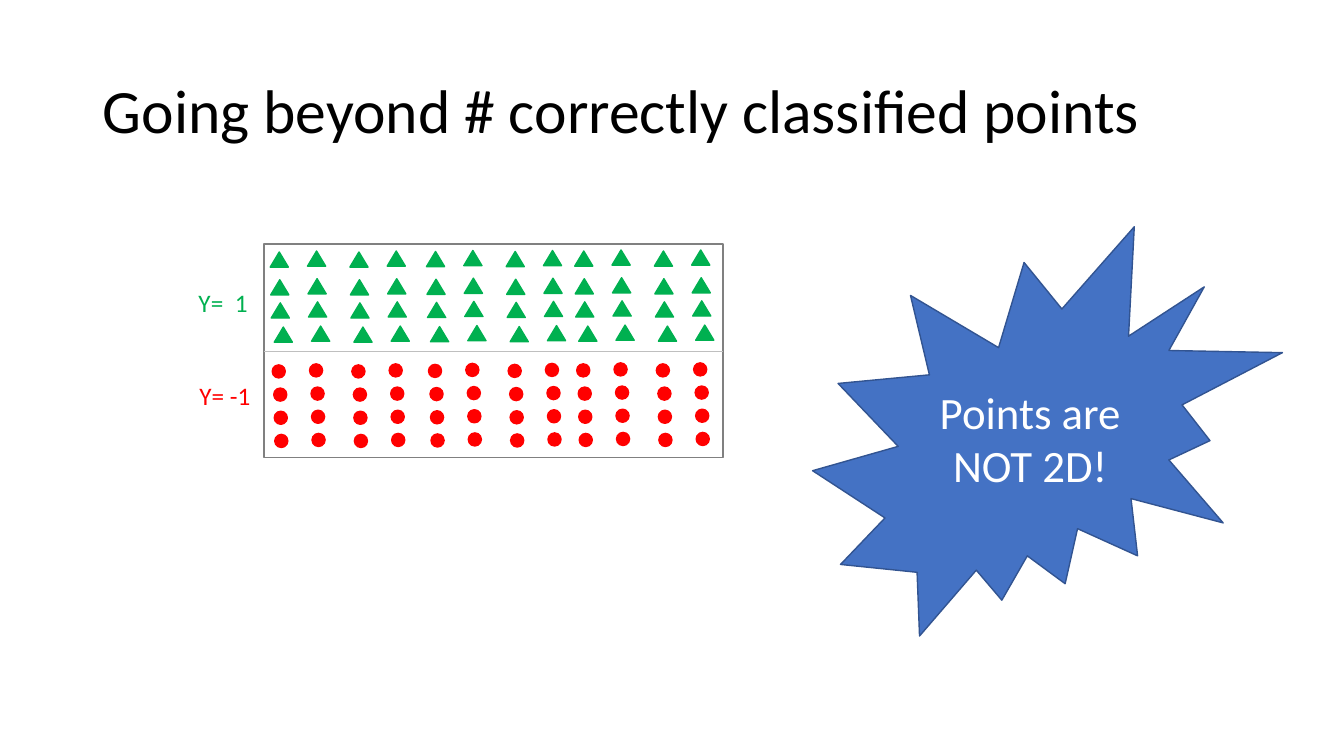
import itertools
import pptx
import pptx.util
import pptx.dml.color
import pptx.enum.shapes
import pptx.enum.text
import pptx.oxml
import pptx.oxml.ns

Kind = pptx.enum.shapes.MSO_SHAPE
Align = pptx.enum.text.PP_ALIGN
Mid = pptx.enum.text.MSO_ANCHOR.MIDDLE
Pt = pptx.util.Pt
hues = {"green": "00B050", "red": "FF0000", "frame": "808080", "rule": "BFBFBF",
        "blue": "4472C4", "edge": "325491", "white": "FFFFFF", "black": "000000"}
tint = {name: pptx.dml.color.RGBColor.from_string(code) for name, code in hues.items()}

deck = pptx.Presentation()
deck.slide_width = pptx.util.Inches(13.33)
deck.slide_height = pptx.util.Inches(7.5)
cell = deck.slide_height / 750
slide = deck.slides.add_slide(deck.slide_layouts[5])


def grid(*spans):
    return [round(span * cell) for span in spans]


def draw(home, kind, spot, fill, edge):
    shape = home.shapes.add_shape(kind, *grid(*spot))
    shape.shadow.inherit = False
    if fill:
        shape.fill.solid()
        shape.fill.fore_color.rgb = tint[fill]
    else:
        shape.fill.background()
    shape.line.color.rgb = tint[edge]
    shape.line.width = Pt(1)
    return shape


plot = slide.shapes.add_group_shape()
draw(plot, Kind.RECTANGLE, (262, 242, 455, 212), None, "frame")
rule = plot.shapes.add_connector(pptx.enum.shapes.MSO_CONNECTOR.STRAIGHT,
                                 *grid(262, 349, 717, 349))
rule.line.color.rgb = tint["rule"]
rule.line.width = Pt(0.5)
props = rule._element.spPr
props.append(pptx.oxml.parse_xml(
    f'<a:effectLst {pptx.oxml.ns.nsdecls("a")}/>'))

marks = [
    (Kind.OVAL, "red", 13, 13, [(270, 362), (271.5, 385), (272, 408), (272.5, 431)]),
    (Kind.ISOSCELES_TRIANGLE, "green", 18, 15,
     [(268, 250), (268.5, 277.5), (269, 300.5), (272, 324.5)]),
]
blocks = [(0, 0), (155, 0.5), (302, 1)]
halves = [(0, 0), (79, 0)]
pairs = [(0, 0), (37, 1)]
for steps in itertools.product(blocks, halves, pairs):
    right = sum(step[0] for step in steps)
    rise = sum(step[1] for step in steps)
    for kind, hue, wide, high, spots in marks:
        for left, top in spots:
            draw(plot, kind, (left + right, top - rise, wide, high), hue, hue)

title = slide.shapes.title
title.left, title.top, title.width, title.height = grid(92, 40, 1150, 145)
frame = title.text_frame
frame.text = "Going beyond # correctly classified points"
frame.auto_size = pptx.enum.text.MSO_AUTO_SIZE.NONE
frame.word_wrap = True
frame.vertical_anchor = Mid
line = frame.paragraphs[0]
line.alignment = Align.LEFT
line.line_spacing = 0.9
texts = [(line, 44, "black")]

names = slide.shapes.add_group_shape()
for words, hue, spot in [("Y=\t1", "green", (187, 280, 69, 40)),
                         ("Y= -1", "red", (188, 372, 71, 40))]:
    label = names.shapes.add_textbox(*grid(*spot))
    label.text_frame.word_wrap = False
    line = label.text_frame.paragraphs[0]
    line.text = words
    line.alignment = Align.LEFT
    if "\t" in words:
        line._p.get_or_add_pPr().append(pptx.oxml.parse_xml(
            f'<a:tabLst {pptx.oxml.ns.nsdecls("a")}>'
            f'<a:tab pos="{grid(36)[0]}" algn="l"/></a:tabLst>'))
    texts.append((line, 18, hue))

burst = draw(slide, Kind.EXPLOSION2, (806, 225, 466, 406), "blue", "edge")
burst.text_frame.text = "Points are NOT 2D!"
burst.text_frame.word_wrap = True
burst.text_frame.vertical_anchor = Mid
line = burst.text_frame.paragraphs[0]
line.alignment = Align.CENTER
texts.append((line, 32, "white"))

for line, size, hue in texts:
    line.font.name = "Calibri"
    line.font.size = Pt(size)
    line.font.color.rgb = tint[hue]

deck.save("out.pptx")
